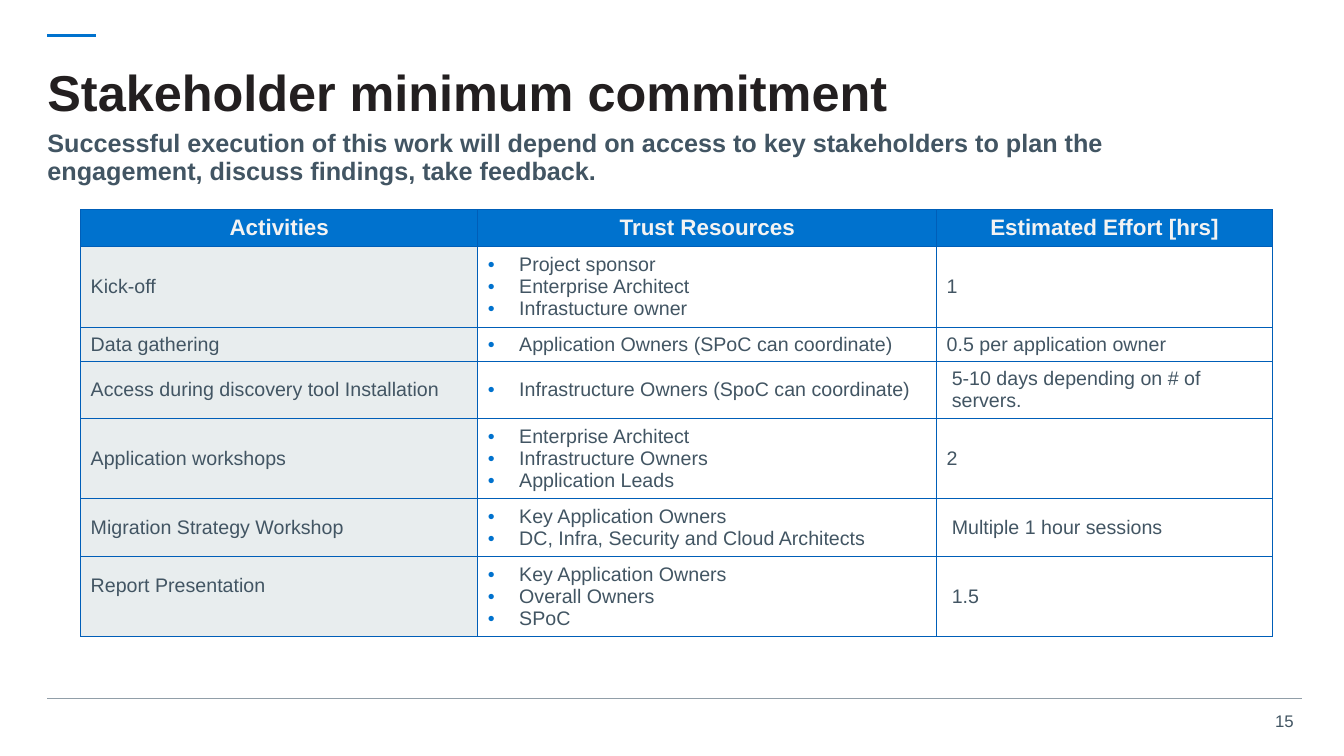
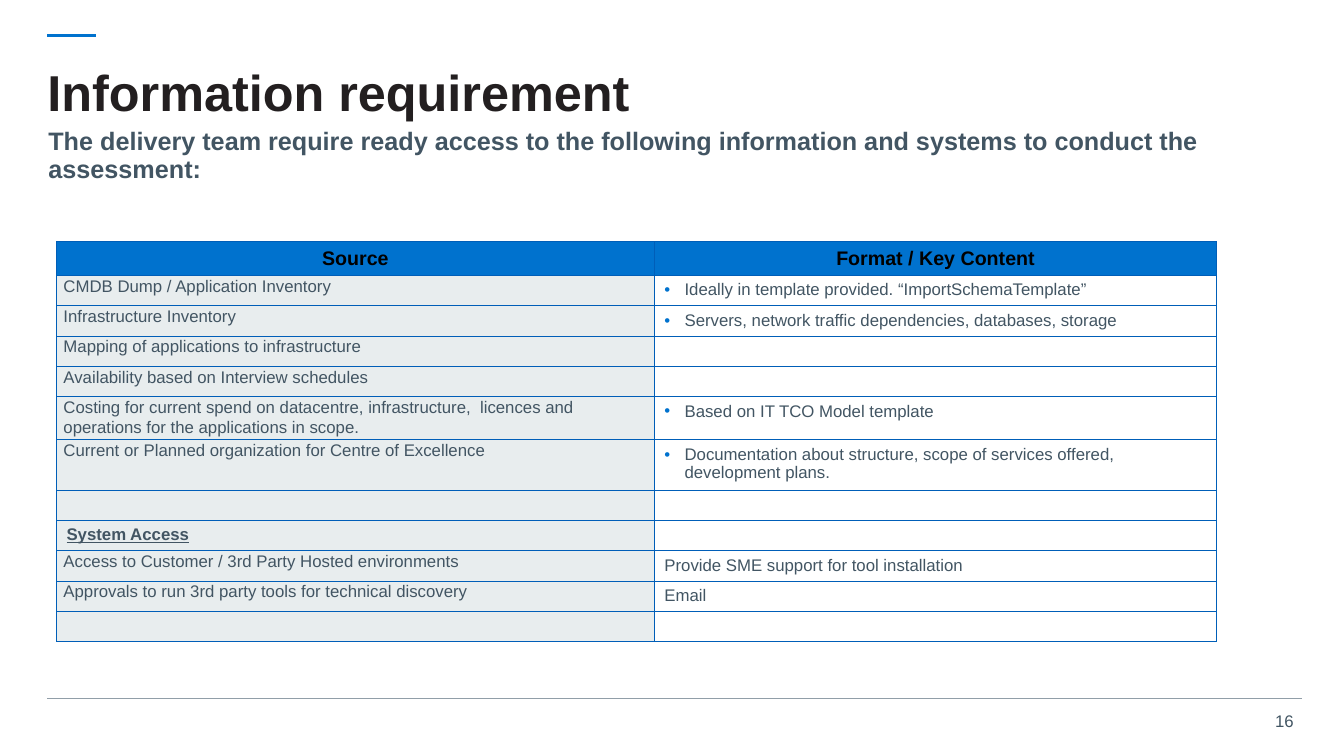
from dataclasses import dataclass

from lxml.etree import Element, SubElement
from pptx import Presentation
from pptx.dml.color import RGBColor as RGB
from pptx.enum.shapes import MSO_CONNECTOR as CONN
from pptx.enum.text import MSO_ANCHOR as ANCHOR, MSO_AUTO_SIZE as AUTO, PP_ALIGN as ALIGN
from pptx.oxml.ns import qn
from pptx.util import Inches, Pt


@dataclass(frozen=True)
class Theme:
    """Colours, font and type sizes of the deck."""
    font: str = "Arial"
    ink: str = "231F20"
    text: str = "425563"
    accent: str = "0072CE"
    border: str = "005EB8"
    rule: str = "919EA8"
    label_fill: str = "E8EDEE"
    light: str = "F3F3F3"
    white: str = "FFFFFF"
    black: str = "000000"
    title: int = 36
    subtitle: int = 18
    header: int = 16
    body: int = 14
    small: int = 12


T = Theme()
NO_STYLE = "{2D5ABB26-0587-4C30-8999-92F81FD0307C}"
INSETS = (0.1, 0.05, 0.1, 0.05)  # left, top, right, bottom


@dataclass
class Cell:
    """A cell whose format differs from that of its column."""
    text: str
    fmt: dict
    insets: tuple = INSETS


def set_color(parent, tag, color):
    node = SubElement(parent, qn(tag))
    SubElement(node, qn("a:srgbClr")).set("val", color)
    return node


def write(tf, text, size=T.body, color=T.text, bold=False, underline=None,
          align=ALIGN.LEFT, spacing=1.0, indent=0, bullet=False):
    """Fill a text frame; a list of strings gives one paragraph each."""
    tf.word_wrap = True
    for i, line in enumerate([text] if isinstance(text, str) else text):
        p = tf.paragraphs[0] if i == 0 else tf.add_paragraph()
        p.alignment, p.line_spacing = align, spacing
        p.space_before = p.space_after = Pt(0)
        pPr = p._p.get_or_add_pPr()
        pPr.set("marL", str(Inches(indent)))
        pPr.set("indent", str(-Inches(indent) if bullet else 0))
        if bullet:
            set_color(pPr, "a:buClr", T.accent)
            SubElement(pPr, qn("a:buFont")).set("typeface", T.font)
            SubElement(pPr, qn("a:buChar")).set("char", "•")
        else:
            SubElement(pPr, qn("a:buNone"))
        if not line:  # keeps an empty row at its own type size
            SubElement(p._p, qn("a:endParaRPr")).set("sz", str(size * 100))
            continue
        r = p.add_run()
        r.text = line
        f = r.font
        f.name, f.size, f.bold, f.underline = T.font, Pt(size), bold, underline
        f.color.rgb = RGB.from_string(color)


def set_insets(box, insets):
    box.margin_left, box.margin_top, box.margin_right, box.margin_bottom = map(Inches, insets)


class Deck:
    def __init__(self):
        self.prs = Presentation()
        self.prs.slide_width, self.prs.slide_height = Inches(13.33), Inches(7.5)
        self.s = None

    def slide(self, number, title, subtitle, subtitle_at):
        """Start a slide with its frame, title and subtitle."""
        self.s = self.prs.slides.add_slide(self.prs.slide_layouts[1])
        self.rule(0.47, 0.95, 0.35, T.accent, 2)
        self.rule(0.47, 12.91, 6.93, T.rule, 0.75)
        self.page_number(number)
        self.placeholder(0, title, (0.47, 0.47, 12.47, 0.95), ANCHOR.MIDDLE,
                         size=T.title, color=T.ink, bold=True, spacing=0.9)
        self.placeholder(1, subtitle, (*subtitle_at, 12.04, 0.63), ANCHOR.TOP,
                         size=T.subtitle, bold=True, spacing=0.92)

    def rule(self, x1, x2, y, color, width):
        c = self.s.shapes.add_connector(CONN.STRAIGHT, Inches(x1), Inches(y), Inches(x2), Inches(y))
        c.line.color.rgb, c.line.width = RGB.from_string(color), Pt(width)
        SubElement(c._element.spPr, qn("a:effectLst"))

    def page_number(self, number):
        sp = self.s.shapes.add_textbox(*map(Inches, (12.52, 7, 0.41, 0.3)))
        set_insets(sp.text_frame, INSETS)
        write(sp.text_frame, str(number), size=T.small, align=ALIGN.RIGHT)

    def placeholder(self, idx, text, at, anchor, **fmt):
        sp = self.s.placeholders[idx]
        sp.left, sp.top, sp.width, sp.height = map(Inches, at)
        tf = sp.text_frame
        tf.auto_size, tf.vertical_anchor = AUTO.NONE, anchor
        set_insets(tf, (0, 0, 0, 0))
        write(tf, text, **fmt)

    def table(self, at, widths, heights, header, rows, header_fmt, body_fmt,
              bullet_indent, label=None, anchor=ANCHOR.TOP):
        """Add a table; lists become bullets, label formats the first column."""
        size = (sum(widths), sum(heights))
        frame = self.s.shapes.add_table(len(heights), len(widths), *map(Inches, (*at, *size)))
        tbl = frame.table
        tbl._tbl.tblPr.find(qn("a:tableStyleId")).text = NO_STYLE
        for col, width in zip(tbl.columns, widths):
            col.width = Inches(width)
        for row, height in zip(tbl.rows, heights):
            row.height = Inches(height)
        for c, text in enumerate(header):
            head = Cell(text, dict(header_fmt, bold=True, align=ALIGN.CENTER))
            self.cell(tbl.cell(0, c), head, T.accent, ANCHOR.MIDDLE)
        for r, values in enumerate(rows, 1):
            for c, value in enumerate(values):
                if isinstance(value, list):
                    value = Cell(value, dict(bullet=True, indent=bullet_indent))
                elif isinstance(value, str):
                    value = Cell(value, *label) if label and c == 0 and value else Cell(value, {})
                value = Cell(value.text, {**body_fmt, **value.fmt}, value.insets)
                self.cell(tbl.cell(r, c), value, T.white if c else T.label_fill, anchor)

    def cell(self, tc, content, fill, anchor):
        set_insets(tc, content.insets)
        tc.vertical_anchor = anchor
        tc.fill.solid()
        tc.fill.fore_color.rgb = RGB.from_string(fill)
        write(tc.text_frame, content.text, **content.fmt)
        tcPr = tc._tc.get_or_add_tcPr()
        for i, side in enumerate("LRTB"):
            ln = Element(qn(f"a:ln{side}"), w=str(Pt(0.75)))
            set_color(ln, "a:solidFill", T.border)
            tcPr.insert(i, ln)


def commitment_slide(deck):
    deck.slide(15, "Stakeholder minimum commitment",
               "Successful execution of this work will depend on access to key stakeholders "
               "to plan the engagement, discuss findings, take feedback.", (0.47, 1.29))
    nudge = dict(indent=0.05)
    rows = [
        ("Kick-off", ["Project sponsor", "Enterprise Architect", "Infrastucture owner"], "1"),
        ("Data gathering", ["Application Owners (SPoC can coordinate)"],
         "0.5 per application owner"),
        ("Access during discovery tool Installation",
         ["Infrastructure Owners (SpoC can coordinate)"],
         Cell("5-10 days depending on # of servers.", nudge)),
        ("Application workshops",
         ["Enterprise Architect", "Infrastructure Owners", "Application Leads"], "2"),
        ("Migration Strategy Workshop",
         ["Key Application Owners", "DC, Infra, Security and Cloud Architects"],
         Cell("Multiple 1 hour sessions", nudge)),
        (Cell("Report Presentation", {}, (0.1, 0.05, 0.1, 0.27)),
         ["Key Application Owners", "Overall Owners", "SPoC"], Cell("1.5", nudge)),
    ]
    deck.table((0.8, 2.08), (3.94, 4.55, 3.33), (0.35, 0.76, 0.32, 0.54, 0.76, 0.54, 0.76),
               ("Activities", "Trust Resources", "Estimated Effort [hrs]"), rows,
               header_fmt=dict(size=T.header, color=T.light), body_fmt=dict(size=T.body),
               bullet_indent=0.31, anchor=ANCHOR.MIDDLE)


def information_slide(deck):
    deck.slide(16, "Information requirement",
               "The delivery team require ready access to the following information "
               "and systems to conduct the assessment:", (0.48, 1.27))
    rows = [
        ("CMDB Dump / Application Inventory",
         ["Ideally in template provided. “ImportSchemaTemplate”"]),
        ("Infrastructure Inventory",
         ["Servers, network traffic dependencies, databases, storage"]),
        ("Mapping of applications to infrastructure", ""),
        ("Availability based on Interview schedules", ""),
        ("Costing for current spend on datacentre, infrastructure,  licences and "
         "operations for the applications in scope.", ["Based on IT TCO Model template"]),
        ("Current or Planned organization for Centre of Excellence",
         ["Documentation about structure, scope of services offered, development plans."]),
        ("", ""),
        (Cell("System Access", dict(bold=True, underline=True)), ""),
        ("Access to Customer / 3rd Party Hosted environments",
         "Provide SME support for tool installation"),
        ("Approvals to run 3rd party tools for technical discovery", "Email"),
        ("", ""),
    ]
    line = 0.285
    deck.table((0.56, 2.4), (5.93, 5.58), (0.32, *[line] * 4, 0.41, 0.46, *[line] * 5),
               ("Source", "Format / Key Content"), rows,
               header_fmt=dict(size=T.body, color=T.black), body_fmt=dict(size=T.small),
               bullet_indent=0.2, label=(dict(spacing=1.07), (0.07, 0, 0.07, 0)))


def main():
    deck = Deck()
    commitment_slide(deck)
    information_slide(deck)
    deck.prs.save("out.pptx")


if __name__ == "__main__":
    main()
